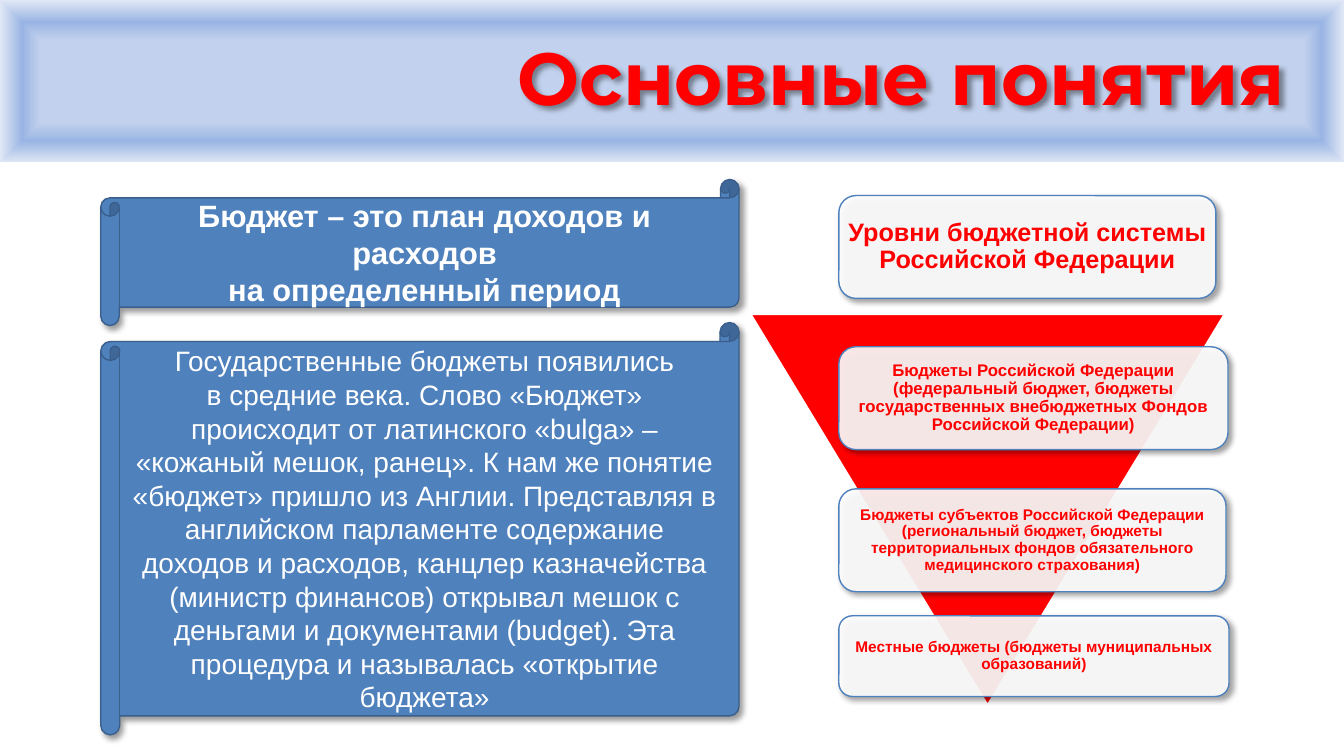
from lxml import etree
from pptx import Presentation
from pptx.dml.color import RGBColor
from pptx.enum.shapes import MSO_CONNECTOR, MSO_SHAPE
from pptx.enum.text import MSO_ANCHOR, MSO_AUTO_SIZE, PP_ALIGN
from pptx.oxml import parse_xml
from pptx.oxml.ns import nsdecls, qn
from pptx.util import Inches, Pt

LINE = MSO_CONNECTOR.STRAIGHT
RECT = MSO_SHAPE.RECTANGLE
ROUNDED = MSO_SHAPE.ROUNDED_RECTANGLE
SCROLL = MSO_SHAPE.HORIZONTAL_SCROLL
TRIANGLE = MSO_SHAPE.ISOSCELES_TRIANGLE
MIDDLE, BOTTOM = MSO_ANCHOR.MIDDLE, MSO_ANCHOR.BOTTOM
CENTER, RIGHT = PP_ALIGN.CENTER, PP_ALIGN.RIGHT
RED, WHITE, BLUE, DARK_BLUE = "FF0000", "FFFFFF", "4F81BD", "3A5F8C"


def rgb(hex_color):
    return RGBColor.from_string(hex_color)


def write(shape, *lines, size, color, font="Arial", bold=False, align=CENTER,
          anchor=MIDDLE, spacing=None, insets=(0.1, 0.05)):
    frame = shape.text_frame
    frame.word_wrap = True
    frame.auto_size = MSO_AUTO_SIZE.NONE
    frame.vertical_anchor = anchor
    frame.margin_left = frame.margin_right = Inches(insets[0])
    frame.margin_top = frame.margin_bottom = Inches(insets[1])
    for index, line in enumerate(lines):
        paragraph = frame.add_paragraph() if index else frame.paragraphs[0]
        paragraph.alignment = align
        paragraph.space_before = Pt(0)
        if spacing:
            paragraph.line_spacing = spacing
        run = paragraph.add_run()
        run.text = line
        run.font.name = font
        run.font.size = Pt(size)
        run.font.bold = bold
        run.font.color.rgb = rgb(color)


class BudgetSlide:
    def __init__(self, deck):
        self.slide = deck.slides.add_slide(deck.slide_layouts[5])
        self.shapes = self.slide.shapes

    def shape(self, kind, box, fill, line=None, width=1):
        shape = self.shapes.add_shape(kind, *map(Inches, box))
        shape.shadow.inherit = False
        shape.fill.solid()
        shape.fill.fore_color.rgb = rgb(fill)
        if line:
            shape.line.color.rgb = rgb(line)
            shape.line.width = Pt(width)
        else:
            shape.line.fill.background()
        return shape

    def shadow(self, shape):
        shape.shadow.inherit = False
        effects = shape._element.spPr.find(qn("a:effectLst"))
        effects.append(parse_xml(
            f'<a:outerShdw {nsdecls("a")} blurRad="50800" dist="38100" dir="2700000" '
            'algn="tl" rotWithShape="0"><a:srgbClr val="000000">'
            '<a:alpha val="40000"/></a:srgbClr></a:outerShdw>'))

    def band(self, box, stops):
        band = self.shape(RECT, box, WHITE)
        marks = "".join(f'<a:gs pos="{pos * 1000}"><a:srgbClr val="{color}"/></a:gs>'
                        for pos, color in stops)
        gradient = parse_xml(
            f'<a:gradFill {nsdecls("a")} rotWithShape="1"><a:gsLst>{marks}</a:gsLst>'
            '<a:path path="shape"><a:fillToRect l="50000" t="50000" r="50000" b="50000"/>'
            '</a:path></a:gradFill>')
        properties = band._element.spPr
        properties.replace(properties.find(qn("a:solidFill")), gradient)

    def rule(self, left, right, y, color, width):
        rule = self.shapes.add_connector(LINE, Inches(left), Inches(y), Inches(right), Inches(y))
        rule.line.color.rgb = rgb(color)
        rule.line.width = Pt(width)
        etree.SubElement(rule._element.spPr, qn("a:effectLst"))

    def title(self, text, box):
        title = self.shapes.title
        title.left, title.top, title.width, title.height = map(Inches, box)
        self.shadow(title)
        write(title, text, size=52.6, color=RED, font="Montserrat", bold=True,
              align=RIGHT, anchor=BOTTOM, spacing=0.9)
        self.shapes._spTree.append(title._element)  # above the band

    def scroll(self, top, height, curl, *lines, size, bold=False):
        scroll = self.shape(SCROLL, (1, top, 6.33, height), BLUE, DARK_BLUE)
        scroll.adjustments[0] = curl
        self.shadow(scroll)
        write(scroll, *lines, size=size, color=WHITE, bold=bold)

    def card(self, top, width, height, text, size):
        card = self.shape(ROUNDED, (8.32, top, width, height), WHITE, BLUE)
        fill_color = card._element.spPr.find(qn("a:solidFill"))[0]
        etree.SubElement(fill_color, qn("a:alpha"), val="90000")
        self.shadow(card)
        write(card, text, size=size, color=RED, bold=True, spacing=0.9, insets=(0.01, 0.01))


def main():
    deck = Presentation()
    deck.slide_width, deck.slide_height = Inches(13.33), Inches(7.5)
    page = BudgetSlide(deck)

    # Header
    page.band((0, 0, 13.33, 1.62), [(50, "C2D1ED"), (73, "9AB5E4"), (100, "E1E8F5")])
    page.rule(0, 13.33, 1.62, WHITE, 2)
    page.title("Основные понятия", (2.65, 0.16, 10.19, 1.09))

    # Levels of the budget system
    pyramid = page.shape(TRIANGLE, (7.45, 3.12, 4.69, 3.87), RED, WHITE)
    pyramid.rotation = 180
    levels = [
        (1.94, 3.74, 1.02, "Уровни бюджетной системы Российской Федерации", 18),
        (3.44, 3.86, 1.02, "Бюджеты Российской Федерации (федеральный бюджет, бюджеты "
         "государственных внебюджетных Фондов Российской Федерации)", 12),
        (4.85, 3.84, 1.02, "Бюджеты субъектов Российской Федерации (региональный бюджет, "
         "бюджеты территориальных фондов обязательного медицинского страхования)", 11),
        (6.11, 3.87, 0.8, "Местные бюджеты (бюджеты муниципальных образований)", 11),
    ]
    for level in levels:
        page.card(*level)

    # Definition and history
    page.scroll(1.78, 1.45, 0.126, "Бюджет – это план доходов и расходов",
                "на определенный период", size=22, bold=True)
    page.scroll(3.2, 4.09, 0.046, "Государственные бюджеты появились",
                "в средние века. Слово «Бюджет» происходит от латинского «bulga» – "
                "«кожаный мешок, ранец». К нам же понятие «бюджет» пришло из Англии. "
                "Представляя в английском парламенте содержание доходов и расходов, "
                "канцлер казначейства (министр финансов) открывал мешок с деньгами и "
                "документами (budget). Эта процедура и называлась «открытие бюджета»",
                size=20)

    deck.save("out.pptx")


if __name__ == "__main__":
    main()
